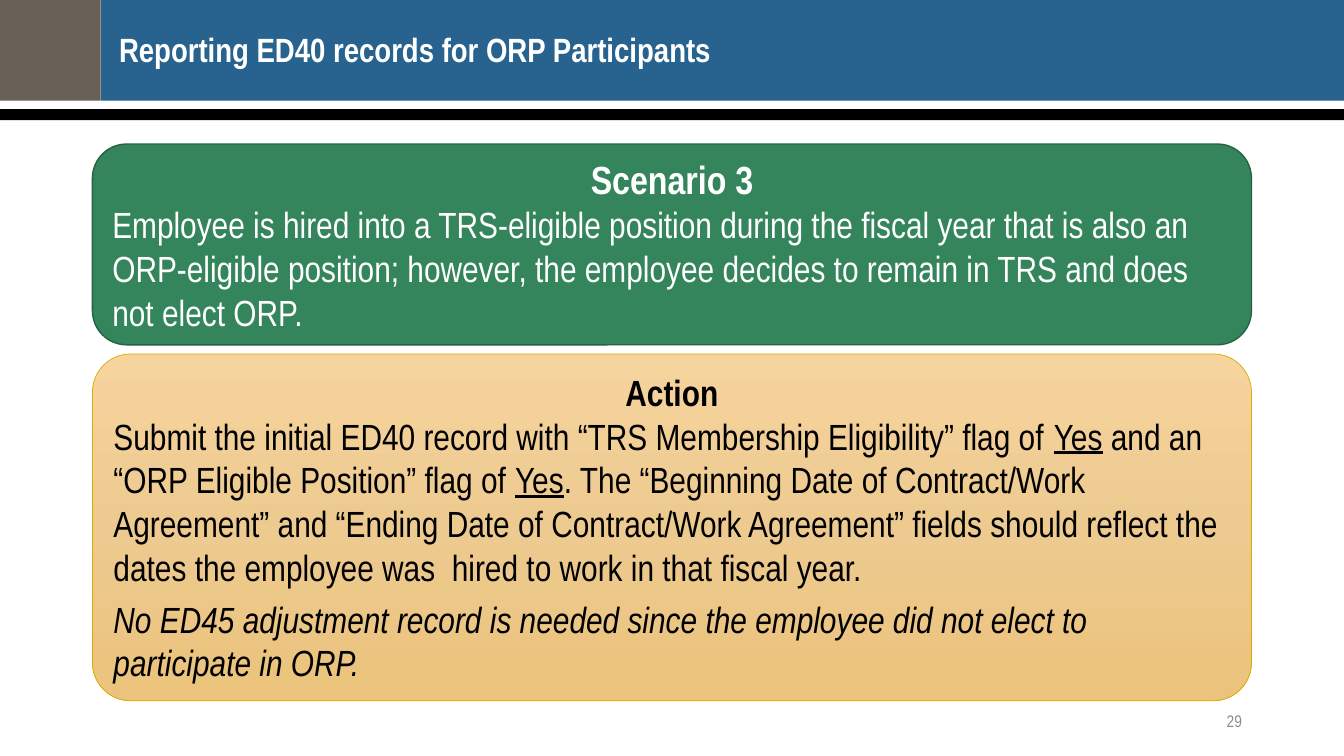
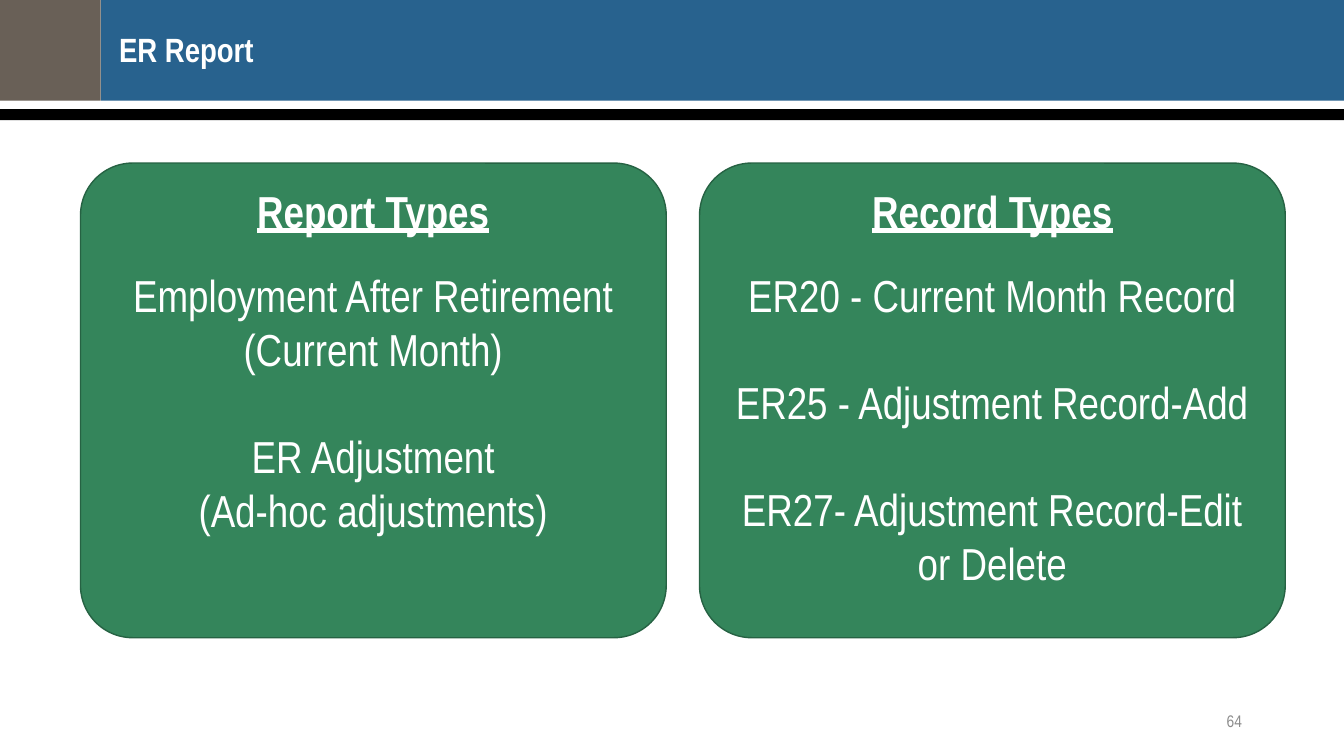
from copy import deepcopy
from dataclasses import dataclass

from pptx import Presentation
from pptx import util as u
from pptx.dml.color import RGBColor
from pptx.enum import shapes, text
from pptx.oxml.ns import qn


@dataclass(frozen=True)
class Theme:
    font: str = "Arial Narrow"
    blue: str = "28628E"
    taupe: str = "696057"
    black: str = "000000"
    white: str = "FFFFFF"
    gray: str = "8C8C8C"
    green: str = "34855B"
    green_line: str = "266243"
    gold: tuple = ("F6D49D", "EDCA90", "EBC37C")
    gold_line: str = "DBA900"
    number_size: int = 12
    title_size: int = 24
    body_size: int = 26
    heading_size: int = 28
    list_size: int = 32


theme = Theme()
LEFT, CENTER, RIGHT = text.PP_ALIGN.LEFT, text.PP_ALIGN.CENTER, text.PP_ALIGN.RIGHT
TOP, MIDDLE = text.MSO_ANCHOR.TOP, text.MSO_ANCHOR.MIDDLE


def add_run(paragraph, content, size, color, style=""):
    """Add one run; style holds any of b (bold), i (italic), u (underline)."""
    run = paragraph.add_run()
    run.text = content
    run.font.name = theme.font
    run.font.size = u.Pt(size)
    run.font.color.rgb = RGBColor.from_string(color)
    run.font.bold = "b" in style
    run.font.italic = "i" in style
    run.font.underline = "u" in style


def add_block(slide, preset, box, fill):
    """Add a preset shape without line or shadow; several fills make a gradient."""
    shape = slide.shapes.add_shape(preset, *map(u.Cm, box))
    shape.shadow.inherit = False
    shape.line.fill.background()
    if isinstance(fill, str):
        shape.fill.solid()
        shape.fill.fore_color.rgb = RGBColor.from_string(fill)
        return shape
    shape.fill.gradient()
    shape.fill.gradient_angle = 270
    stop_list = shape.element.find(".//" + qn("a:gsLst"))
    while len(stop_list) < len(fill):
        stop_list.append(deepcopy(stop_list[0]))
    for index, (stop, color) in enumerate(zip(shape.fill.gradient_stops, fill)):
        stop.position = index / (len(fill) - 1)
        stop.color.rgb = RGBColor.from_string(color)
    return shape


# Card styles: fill, line colour, line width, text colour
green_card = (theme.green, theme.green_line, 1, theme.white)
gold_card = (theme.gold, theme.gold_line, 0.5, theme.black)

# Paragraphs: alignment, space before, size, runs of (text, style)
scenario = [
    (CENTER, 0, theme.heading_size, [("Scenario 3", "b")]),
    (LEFT, 0, theme.body_size, [
        ("Employee is hired into a TRS-eligible position during the fiscal year that is "
         "also an ORP-eligible position; however, the employee decides to remain in TRS "
         "and does not elect ORP.", "")]),
]
action = [
    (CENTER, 0, theme.body_size, [("Action", "b")]),
    (LEFT, 0, theme.body_size, [
        ("Submit the initial ED40 record with “TRS Membership Eligibility” flag of ", ""),
        ("Yes", "u"),
        (" and an “ORP Eligible Position” flag of ", ""),
        ("Yes", "u"),
        (". The “Beginning Date of Contract/Work Agreement” and “Ending Date of "
         "Contract/Work Agreement” fields should reflect the dates the employee was  "
         "hired to work in that fiscal year.", "")]),
    (LEFT, 6, theme.body_size, [
        ("No ED45 adjustment record is needed since the employee did not elect to "
         "participate in ORP.", "i")]),
]
report_types, record_types = (
    [(CENTER, gap, theme.list_size, [(line, style)]) for line, gap, style in lines]
    for lines in (
        [("Report Types", 0, "bu"),
         ("Employment After Retirement", 22, ""),
         ("(Current Month)", 0, ""),
         ("ER Adjustment", 38, ""),
         ("(Ad-hoc adjustments)", 0, "")],
        [("Record Types", 0, "bu"),
         ("ER20 - Current Month Record", 22, ""),
         ("ER25 - Adjustment Record-Add", 38, ""),
         ("ER27- Adjustment Record-Edit or Delete", 38, "")],
    )
)

# Slides: title, number, cards of (box, corner, anchor, style, paragraphs)
pages = [
    ("Reporting ED40 records for ORP Participants", "29", [
        ((2.33, 3.63, 29.21, 5.06), 0.17, MIDDLE, green_card, scenario),
        ((2.33, 8.92, 29.21, 8.74), 0.11, TOP, gold_card, action)]),
    ("ER Report", "64", [
        ((2.03 + column * 15.6, 4.11, 14.76, 11.96), 0.11, TOP, green_card, paragraphs)
        for column, paragraphs in enumerate((report_types, record_types))]),
]

presentation = Presentation()
presentation.slide_width, presentation.slide_height = u.Cm(33.87), u.Cm(19.05)
layout = presentation.slide_layouts.get_by_name("Title Only")

for page_index, (title_text, number, cards) in enumerate(pages):
    slide = presentation.slides.add_slide(layout)

    # Header bands, moved to the layout that all slides share
    if page_index == 0:
        for box, color in (
            ((2.54, 0, 31.33, 2.54), theme.blue),
            ((0, 0, 2.54, 2.54), theme.taupe),
            ((0, 2.75, 33.87, 0.28), theme.black),
        ):
            band = add_block(slide, shapes.MSO_SHAPE.RECTANGLE, box, color)
            layout.shapes.element.append(band.element)

    # Title
    title = slide.shapes.title
    title.left, title.top, title.width, title.height = map(u.Cm, (3, 0.84, 28.52, 1.42))
    frame = title.text_frame
    frame.margin_left = frame.margin_top = frame.margin_right = frame.margin_bottom = 0
    frame.vertical_anchor = TOP
    frame.auto_size = text.MSO_AUTO_SIZE.NONE
    frame.paragraphs[0].alignment = LEFT
    frame.paragraphs[0].line_spacing = 0.9
    add_run(frame.paragraphs[0], title_text, theme.title_size, theme.white, "b")

    # Slide number
    frame = slide.shapes.add_textbox(*map(u.Cm, (23.93, 17.65, 7.62, 1.02))).text_frame
    frame.word_wrap = True
    frame.vertical_anchor = MIDDLE
    frame.paragraphs[0].alignment = RIGHT
    add_run(frame.paragraphs[0], number, theme.number_size, theme.gray)

    # Cards
    for box, corner, anchor, (fill, line_color, line_width, text_color), paragraphs in cards:
        card = add_block(slide, shapes.MSO_SHAPE.ROUNDED_RECTANGLE, box, fill)
        card.adjustments[0] = corner
        card.line.color.rgb = RGBColor.from_string(line_color)
        card.line.width = u.Pt(line_width)
        frame = card.text_frame
        frame.word_wrap = True
        frame.vertical_anchor = anchor
        for index, (alignment, gap, size, runs) in enumerate(paragraphs):
            paragraph = frame.add_paragraph() if index else frame.paragraphs[0]
            paragraph.alignment = alignment
            if gap:
                paragraph.space_before = u.Pt(gap)
            for content, style in runs:
                add_run(paragraph, content, size, text_color, style)

presentation.save("out.pptx")
